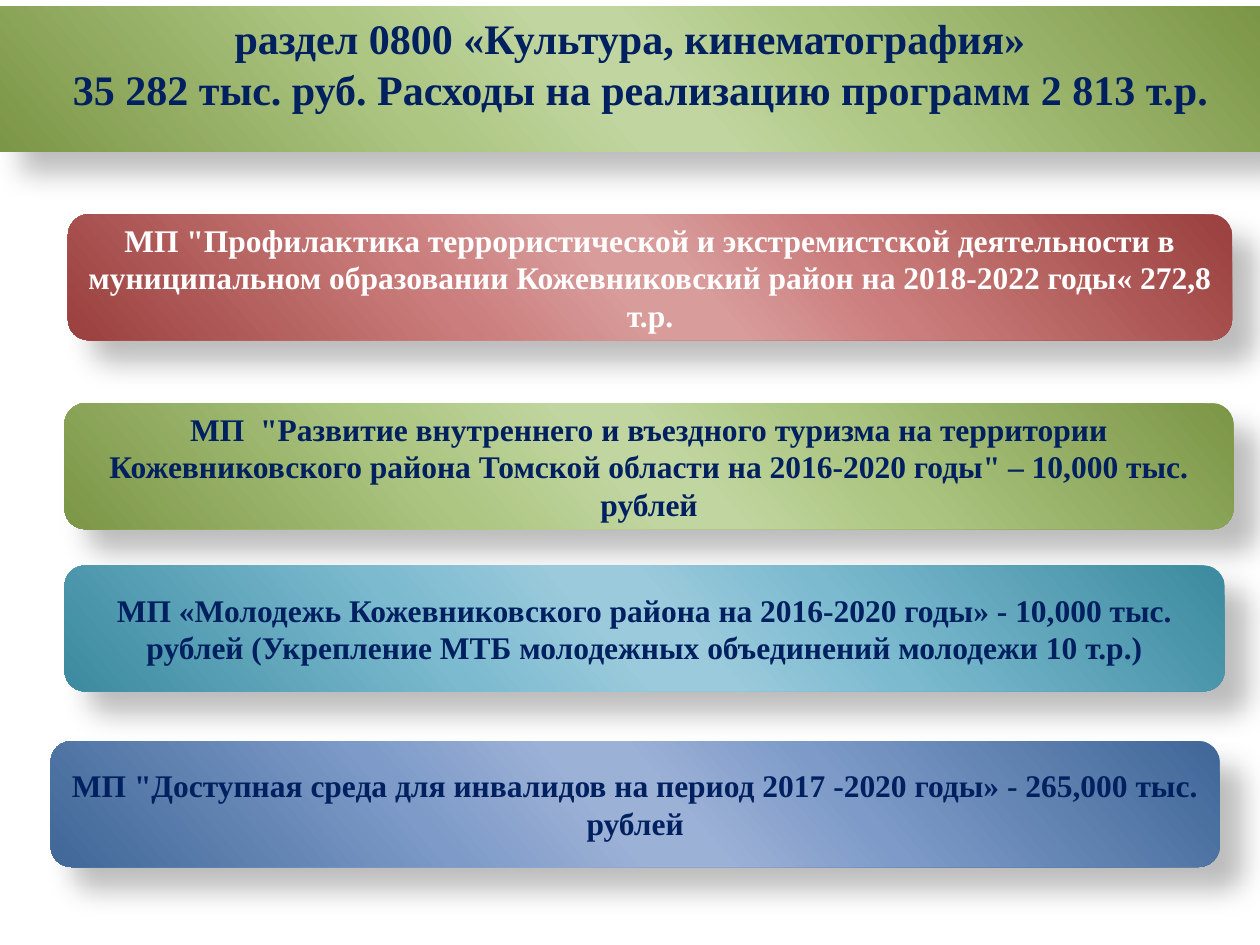
from dataclasses import dataclass

from lxml.etree import SubElement
from pptx import Presentation
from pptx.dml.color import RGBColor as Rgb
from pptx.enum.shapes import MSO_SHAPE as Kind
from pptx.enum.text import MSO_ANCHOR as Anchor, PP_ALIGN as Align
from pptx.oxml.ns import qn
from pptx.util import Cm, Pt

FONT = "Times New Roman"
HUES = {"navy": "002060", "white": "FFFFFF", "black": "000000"}
# Edge, middle and centre shade of each gradient
SHADES = {
    "green": ("7C9647", "ADC682", "C0D59F"),
    "red": ("9A403E", "CA7D7C", "D89C9B"),
    "teal": ("3C8A9F", "7BBACF", "9ACADC"),
    "blue": ("3F6797", "7D9AC8", "9CB1D6"),
}
STOPS = ((0, 0), (33, 1), (47, 2), (53, 2), (68, 1), (100, 0))
ANGLE = 139


@dataclass
class Panel:
    left: float
    top: float
    width: float
    shade: str
    text: str
    ink: str = "navy"
    height: float = 2.54
    size: int = 18
    kind: Kind = Kind.ROUNDED_RECTANGLE
    anchor: Anchor = Anchor.MIDDLE


TITLE = Panel(0, 0.13, 25.4, "green",
              "раздел 0800 «Культура, кинематография»\v"
              "35 282 тыс. руб. Расходы на реализацию программ 2 813 т.р.",
              height=2.92, size=24, kind=Kind.RECTANGLE, anchor=Anchor.TOP)
PLANS = [
    Panel(1.37, 4.32, 23.47, "red",
          'МП "Профилактика террористической и экстремистской деятельности в '
          'муниципальном образовании Кожевниковский район на 2018-2022 годы« '
          '272,8 т.р.', ink="white"),
    Panel(1.3, 8.13, 23.57, "green",
          'МП  "Развитие внутреннего и въездного туризма на территории '
          'Кожевниковского района Томской области на 2016-2020 годы" – '
          '10,000 тыс. рублей'),
    Panel(1.3, 11.4, 23.39, "teal",
          'МП «Молодежь Кожевниковского района на 2016-2020 годы» - 10,000 тыс. '
          'рублей (Укрепление МТБ молодежных объединений молодежи 10 т.р.)'),
    Panel(1.02, 14.94, 23.57, "blue",
          'МП "Доступная среда для инвалидов на период 2017 -2020 годы» - '
          '265,000 тыс. рублей'),
]


def add_fill(shape, shade: str) -> None:
    """Fill with a slanted gradient that is lightest in the centre."""
    shape.fill.gradient()
    grad = shape._element.spPr.find(qn("a:gradFill"))
    for child in list(grad):
        grad.remove(child)
    stops = SubElement(grad, qn("a:gsLst"))
    for place, tone in STOPS:
        stop = SubElement(stops, qn("a:gs"), pos=str(place * 1000))
        SubElement(stop, qn("a:srgbClr"), val=SHADES[shade][tone])
    SubElement(grad, qn("a:lin"), ang=str(ANGLE * 60000), scaled="0")


def add_shadow(shape) -> None:
    shape.shadow.inherit = False
    effects = shape._element.spPr.find(qn("a:effectLst"))
    outer = SubElement(effects, qn("a:outerShdw"), blurRad=str(Pt(15)),
                       dist=str(Pt(18)), dir=str(45 * 60000), rotWithShape="0")
    color = SubElement(outer, qn("a:srgbClr"), val=HUES["black"])
    SubElement(color, qn("a:alpha"), val="26000")


def add_panel(slide, panel: Panel):
    shape = slide.shapes.add_shape(panel.kind, Cm(panel.left), Cm(panel.top),
                                   Cm(panel.width), Cm(panel.height))
    add_fill(shape, panel.shade)
    shape.line.fill.background()
    add_shadow(shape)
    frame = shape.text_frame
    frame.text = panel.text
    frame.word_wrap = True
    frame.vertical_anchor = panel.anchor
    para = frame.paragraphs[0]
    para.alignment = Align.CENTER
    for run in para.runs:
        font = run.font
        font.name, font.size, font.bold = FONT, Pt(panel.size), True
        font.color.rgb = Rgb.from_string(HUES[panel.ink])
    return shape


def main() -> None:
    deck = Presentation()
    deck.slide_width, deck.slide_height = Cm(25.4), Cm(19.05)
    slide = deck.slides.add_slide(deck.slide_layouts[6])
    title = add_panel(slide, TITLE)
    # A hanging indent shifts only the second line
    props = title.text_frame.paragraphs[0]._p.get_or_add_pPr()
    props.set("marL", str(Pt(12)))
    props.set("indent", str(-Pt(12)))
    for plan in PLANS:
        add_panel(slide, plan)
    deck.save("out.pptx")


if __name__ == "__main__":
    main()
